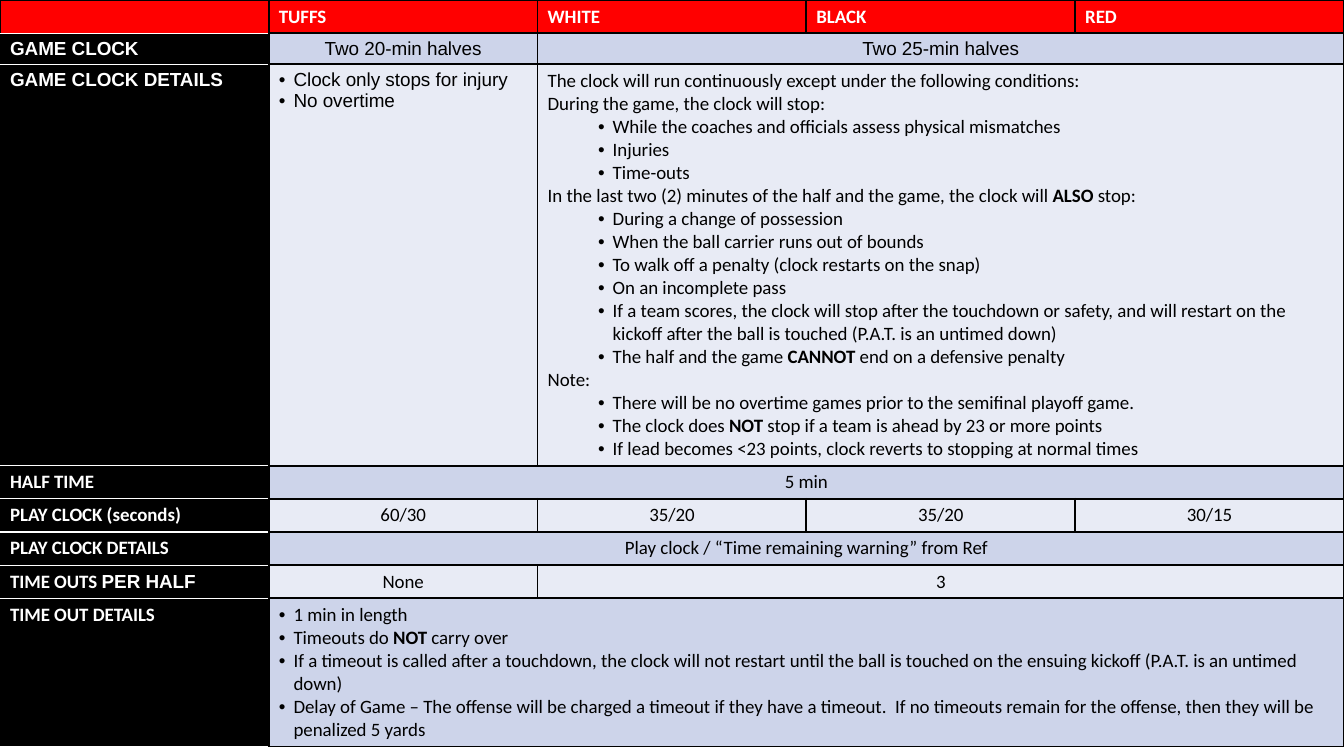
import dataclasses

import lxml.etree
import pptx
import pptx.dml.color
import pptx.enum.text
import pptx.oxml.ns
import pptx.util


@dataclasses.dataclass(frozen=True)
class Theme:
    red: str = "FF0000"
    black: str = "000000"
    white: str = "FFFFFF"
    dark: str = "CDD4EA"
    light: str = "E8EBF5"
    body: str = "Calibri"
    alt: str = "Arial"
    size: float = 13.5
    thick: float = 1.5
    thin: float = 1


PX = 9525
HEADS = ["", "TUFFS", "WHITE", "BLACK", "RED"]
STOPS = [
    "The clock will run continuously except under the following conditions:",
    "During the game, the clock will stop:",
    ">>While the coaches and officials assess physical mismatches",
    ">>Injuries",
    ">>Time-outs",
    "In the last two (2) minutes of the half and the game, the clock will *ALSO* stop:",
    ">>During a change of possession",
    ">>When the ball carrier runs out of bounds",
    ">>To walk off a penalty (clock restarts on the snap)",
    ">>On an incomplete pass",
    ">>If a team scores, the clock will stop after the touchdown or safety, and will restart "
    "on the kickoff after the ball is touched (P.A.T. is an untimed down)",
    ">>The half and the game *CANNOT* end on a defensive penalty",
    "Note:",
    ">There will be no overtime games prior to the semifinal playoff game.",
    ">The clock does *NOT* stop if a team is ahead by 23 or more points",
    ">If lead becomes <23 points, clock reverts to stopping at normal times",
]
BREAKS = [
    "•1 min in length",
    "•Timeouts do *NOT* carry over",
    "•If a timeout is called after a touchdown, the clock will not restart until the ball is "
    "touched on the ensuing kickoff (P.A.T. is an untimed down)",
    "•Delay of Game – The offense will be charged a timeout if they have a timeout.  If no "
    "timeouts remain for the offense, then they will be penalized 5 yards",
]
ROWS = [
    ("~GAME CLOCK", 27, [(1, ["~Two 20-min halves"]), (3, ["~Two 25-min halves"])]),
    ("~GAME CLOCK DETAILS", 331,
     [(1, ["•~Clock only stops for injury", "•~No overtime"]), (3, STOPS)]),
    ("HALF TIME", 27, [(4, ["5 min"])]),
    ("PLAY CLOCK (seconds)", 27,
     [(1, ["60/30"]), (1, ["35/20"]), (1, ["35/20"]), (1, ["30/15"])]),
    ("PLAY CLOCK DETAILS", 27, [(4, ["Play clock / “Time remaining warning” from Ref"])]),
    ("TIME OUTS ~PER HALF", 27, [(1, ["None"]), (3, ["3"])]),
    ("TIME OUT DETAILS", 123, [(4, BREAKS)]),
]


class Deck:
    """Draws styled elements on the current slide."""

    def __init__(self, theme, wide, high):
        self.theme = theme
        self.show = pptx.Presentation()
        self.show.slide_width, self.show.slide_height = wide * PX, high * PX
        self.slide = self.show.slides.add_slide(self.show.slide_layouts[6])

    def node(self, root, tag, **attrs):
        return lxml.etree.SubElement(root, pptx.oxml.ns.qn(tag), **attrs)

    def table(self, left, top, wide, highs, count):
        frame = self.slide.shapes.add_table(
            len(highs), count, left * PX, top * PX, wide * count * PX, sum(highs) * PX)
        grid = frame.table
        for col in grid.columns:
            col.width = wide * PX
        for row, high in zip(grid.rows, highs):
            row.height = high * PX
        return grid

    def edge(self, cell, side, color, width):
        props = cell._tc.get_or_add_tcPr()
        line = self.node(props, "a:ln" + side, w=str(pptx.util.Pt(width)))
        self.node(self.node(line, "a:solidFill"), "a:srgbClr", val=color)

    def box(self, cell, fill, top=False, bottom=False):
        look = self.theme
        for side in "LRTB":
            pale = (side == "T" and top) or (side == "B" and bottom)
            self.edge(cell, side, look.white if pale else look.black,
                      look.thin if pale else look.thick)
        cell.fill.solid()
        cell.fill.fore_color.rgb = pptx.dml.color.RGBColor.from_string(fill)

    def text(self, cell, lines, color, bold=False, center=False):
        for index, line in enumerate(lines):
            para = cell.text_frame.paragraphs[0] if index == 0 else cell.text_frame.add_paragraph()
            words = line.lstrip("•>")
            if center:
                para.alignment = pptx.enum.text.PP_ALIGN.CENTER
            if words != line:
                self.bullet(para, line.count(">", 0, 2))
            for i, part in enumerate(words.split("*")):
                for j, piece in enumerate(part.split("~")):
                    if piece:
                        self.run(para, piece, color, bold or i % 2 == 1, j % 2 == 1)
            if not words:
                self.node(para._p, "a:endParaRPr", sz=str(int(self.theme.size * 100)))

    def bullet(self, para, level):
        para.level = level
        props = para._p.get_or_add_pPr()
        props.set("marL", str((62 if level else 14) * PX))
        props.set("indent", str(-14 * PX))
        self.node(self.node(props, "a:buClr"), "a:srgbClr", val=self.theme.black)
        self.node(props, "a:buFont", typeface=self.theme.alt)
        self.node(props, "a:buChar", char="•")

    def run(self, para, words, color, bold, alt):
        run = para.add_run()
        run.text = words
        run.font.name = self.theme.alt if alt else self.theme.body
        run.font.size = pptx.util.Pt(self.theme.size)
        run.font.bold = bold
        run.font.color.rgb = pptx.dml.color.RGBColor.from_string(color)


def main():
    look = Theme()
    deck = Deck(look, 1280, 720)
    grid = deck.table(0, 0, 256, [27] + [high for _, high, _ in ROWS], len(HEADS))
    for col, head in enumerate(HEADS):
        cell = grid.cell(0, col)
        deck.box(cell, look.red, bottom=col == 0)
        deck.text(cell, [head], look.white, bold=True)
    for row, (label, _, groups) in enumerate(ROWS, 1):
        cell = grid.cell(row, 0)
        deck.box(cell, look.black, top=True, bottom=True)
        deck.text(cell, [label], look.white, bold=True)
        col = 1
        for span, lines in groups:
            for step in range(span):
                cell = grid.cell(row, col + step)
                deck.box(cell, look.dark if row % 2 else look.light)
                deck.text(cell, [""] if step else lines, look.black, center=len(lines) == 1)
            if span > 1:
                grid.cell(row, col).merge(grid.cell(row, col + span - 1))
            col += span
    deck.show.save("out.pptx")


if __name__ == "__main__":
    main()
